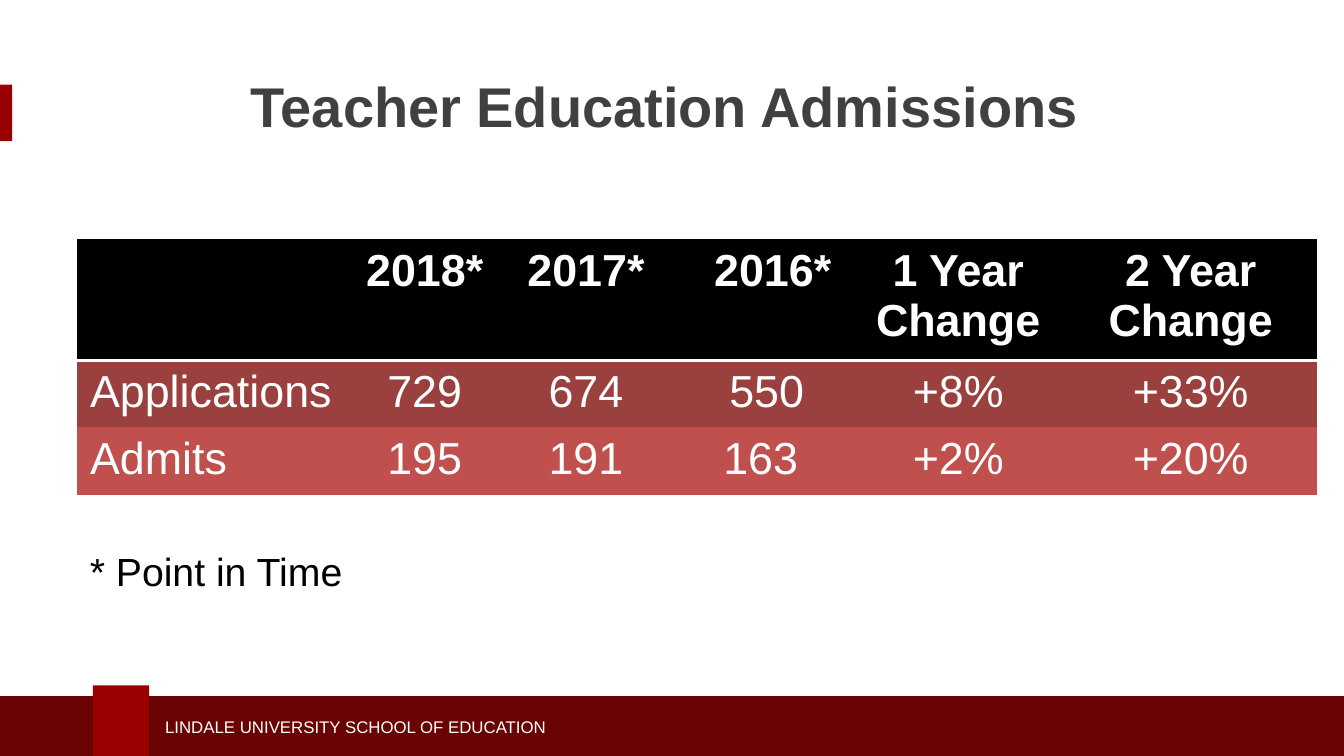
import pptx
import pptx.util
import pptx.dml.color
import pptx.enum.shapes
import pptx.enum.text
import pptx.oxml
import pptx.oxml.ns
from dataclasses import dataclass

Inches = pptx.util.Inches
Align = pptx.enum.text.PP_ALIGN
Anchor = pptx.enum.text.MSO_ANCHOR


@dataclass(frozen=True)
class Theme:
    font: str = "Arial"
    red: str = "990000"
    dark: str = "690304"
    gray: str = "404041"
    black: str = "000000"
    white: str = "FFFFFF"
    rows: tuple = ("000000", "9A403E", "C0504D")
    title: int = 30
    body: int = 24
    note: int = 21
    foot: int = 9


def tint(code):
    return pptx.dml.color.RGBColor.from_string(code)


def write(frame, text, size, color, font, bold=False, align=Align.LEFT):
    para = frame.paragraphs[0]
    para.alignment = align
    run = para.add_run()
    run.text = text
    run.font.name = font
    run.font.size = pptx.util.Pt(size)
    run.font.bold = bold
    run.font.color.rgb = tint(color)


def rule(cell, color, width):
    line = pptx.oxml.parse_xml(
        f'<a:lnB {pptx.oxml.ns.nsdecls("a")} w="{pptx.util.Pt(width)}">'
        f'<a:solidFill><a:srgbClr val="{color}"/></a:solidFill></a:lnB>'
    )
    cell._tc.get_or_add_tcPr().insert(0, line)


class Page:
    plain = "{2D5ABB26-0587-4C30-8999-92F81FD0307C}"

    def __init__(self, slide, theme):
        self.slide = slide
        self.theme = theme

    def block(self, box, color):
        kind = pptx.enum.shapes.MSO_SHAPE.RECTANGLE
        shape = self.slide.shapes.add_shape(kind, *map(Inches, box))
        shape.shadow.inherit = False
        shape.fill.solid()
        shape.fill.fore_color.rgb = tint(color)
        shape.line.fill.background()

    def label(self, box, text, size, color, anchor=Anchor.TOP, **style):
        frame = self.slide.shapes.add_textbox(*map(Inches, box)).text_frame
        frame.word_wrap = True
        frame.vertical_anchor = anchor
        write(frame, text, size, color, self.theme.font, **style)

    def grid(self, left, top, widths, heights, data, shifts):
        look = self.theme
        table = self.slide.shapes.add_table(
            len(heights), len(widths), Inches(left), Inches(top),
            Inches(sum(widths)), Inches(sum(heights))).table
        table.first_row = table.horz_banding = False
        table._tbl.tblPr.find(pptx.oxml.ns.qn("a:tableStyleId")).text = self.plain
        for col, width in zip(table.columns, widths):
            col.width = Inches(width)
        for r, (height, texts) in enumerate(zip(heights, data)):
            table.rows[r].height = Inches(height)
            for c, text in enumerate(texts):
                cell = table.cell(r, c)
                cell.fill.solid()
                cell.fill.fore_color.rgb = tint(look.rows[r])
                cell.margin_left = Inches(0.1 + shifts.get((r, c), 0))
                if r == 0:
                    rule(cell, look.white, 2)
                if text:
                    write(cell.text_frame, text, look.body, look.white, look.font,
                          bold=r == 0, align=Align.CENTER if c else Align.LEFT)


def main():
    deck = pptx.Presentation()
    deck.slide_width = Inches(10)
    deck.slide_height = deck.slide_width * 9 // 16
    look = Theme()
    page = Page(deck.slides.add_slide(deck.slide_layouts[6]), look)
    left = 0.57

    page.block((0, 0.63, 0.09, 0.42), look.red)
    page.block((-0.03, 5.18, 10.09, 0.5), look.dark)
    page.block((0.69, 5.1, 0.42, 0.58), look.red)
    page.label((1.13, 5.28, 3.95, 0.25), "LINDALE UNIVERSITY SCHOOL OF EDUCATION",
               look.foot, look.white, anchor=Anchor.MIDDLE)
    page.label((left, 0.4, 8.75, 0.76), "Teacher Education Admissions",
               look.title, look.gray, anchor=Anchor.MIDDLE, bold=True,
               align=Align.CENTER)

    data = [
        ["", "2018*", "2017*", "2016*", "1 Year Change", "2 Year Change"],
        ["Applications", "729", "674", "550", "+8%", "+33%"],
        ["Admits", "195", "191", "163", "+2%", "+20%"],
    ]
    page.grid(left, 1.78, [2.01, 1.16, 1.24, 1.36, 1.58, 1.88], [0.9, 0.5, 0.5],
              data, {(0, 3): 0.18, (1, 3): 0.09})
    page.label((left, 4.02, 8.06, 0.45), "* Point in Time", look.note, look.black)
    deck.save("out.pptx")


if __name__ == "__main__":
    main()
